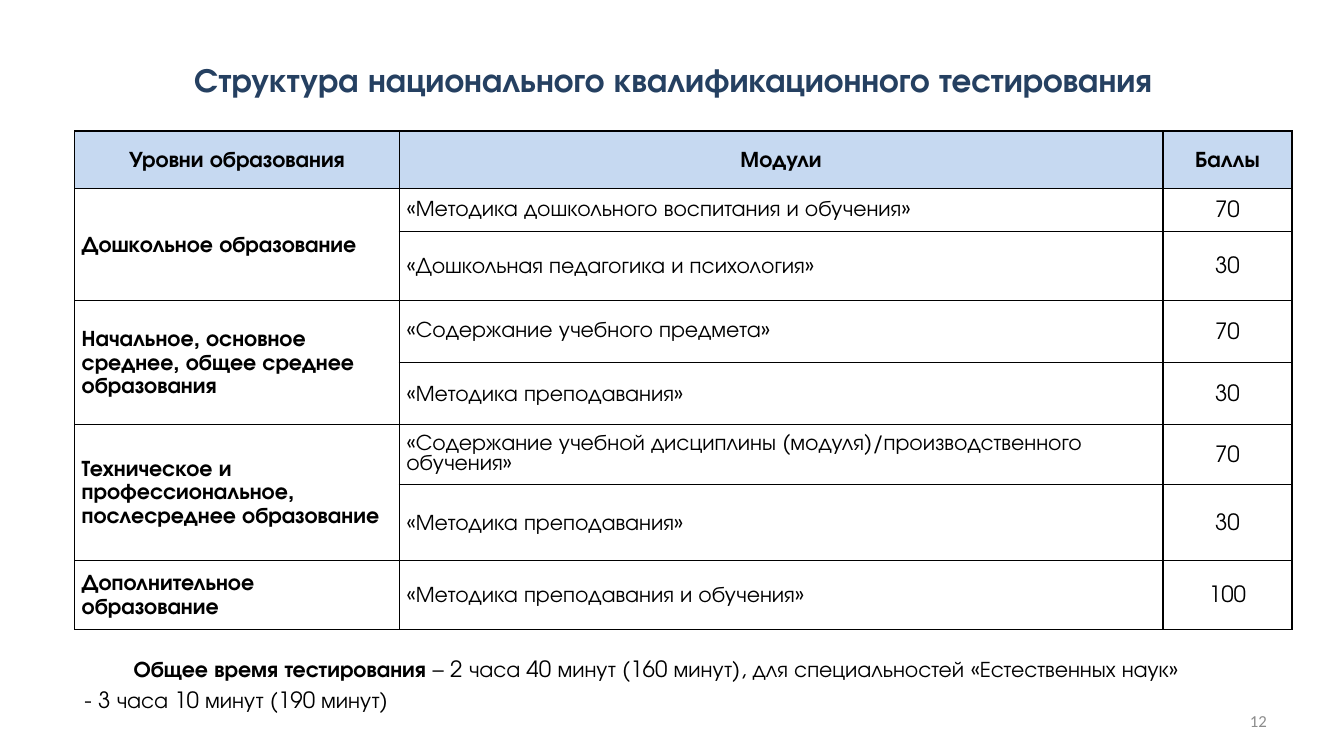
from lxml import etree
from pptx import Presentation
from pptx.dml.color import RGBColor
from pptx.enum.text import MSO_ANCHOR, PP_ALIGN
from pptx.oxml.ns import qn
from pptx.util import Cm, Pt

LEFT, CENTER, RIGHT = PP_ALIGN.LEFT, PP_ALIGN.CENTER, PP_ALIGN.RIGHT
JUSTIFY = PP_ALIGN.JUSTIFY
MIDDLE, TOP = MSO_ANCHOR.MIDDLE, MSO_ANCHOR.TOP

FONT = "TeX Gyre Adventor"
BLACK, NAVY, GRAY, HEADER_BLUE = "000000", "254061", "8C8C8C", "C6D9F1"
BODY = {"name": FONT, "size": Pt(16), "bold": False}
BOLD = {**BODY, "bold": True}
TITLE = {**BOLD, "size": Pt(24)}
PAGE_NUMBER = {"name": "Calibri", "size": Pt(12), "bold": False}


def color(hex_string):
    return RGBColor.from_string(hex_string)


def write(paragraph, runs, text_color=BLACK, **paragraph_format):
    """Fill a paragraph with (text, font format) runs."""
    for name, value in paragraph_format.items():
        setattr(paragraph, name, value)
    for text, font_format in runs:
        run = paragraph.add_run()
        run.text = text
        for name, value in font_format.items():
            setattr(run.font, name, value)
        run.font.color.rgb = color(text_color)


presentation = Presentation()
presentation.slide_width, presentation.slide_height = Cm(33.87), Cm(19.05)
slide = presentation.slides.add_slide(presentation.slide_layouts[6])

# Title, page number and note under the table
title_runs = [("Структура национального квалификационного тестирования", TITLE)]
note_runs = [
    ("Общее время тестирования ", BOLD),
    ("– 2 часа 40 минут (160 минут), для специальностей «Естественных наук» "
     "- 3 часа 10 минут (190 минут)", BODY),
]
text_boxes = [
    ((1.73, 1.14, 30.48, 1.73), MIDDLE, title_runs, NAVY, CENTER, 1.0, 0),
    ((24.28, 17.65, 7.9, 1.02), MIDDLE, [("12", PAGE_NUMBER)], GRAY, RIGHT, 1.0, 0),
    ((1.88, 16.28, 28.09, 1.83), TOP, note_runs, BLACK, JUSTIFY, 1.15, 1.24),
]
for box, anchor, runs, text_color, alignment, spacing, indent in text_boxes:
    text_frame = slide.shapes.add_textbox(*map(Cm, box)).text_frame
    text_frame.word_wrap = True
    text_frame.vertical_anchor = anchor
    paragraph = text_frame.paragraphs[0]
    write(paragraph, runs, text_color, alignment=alignment, line_spacing=spacing)
    if indent:
        paragraph._p.get_or_add_pPr().set("indent", str(Cm(indent)))

# Table: each level of education with its modules and points
headers = ["Уровни образования", "Модули", "Баллы"]
levels = [
    ("Дошкольное образование", [
        ("«Методика дошкольного воспитания и обучения»", 70),
        ("«Дошкольная педагогика и психология»", 30)]),
    ("Начальное, основное среднее, общее среднее образования", [
        ("«Содержание учебного предмета»", 70),
        ("«Методика преподавания»", 30)]),
    ("Техническое и профессиональное, послесреднее образование", [
        ("«Содержание учебной дисциплины (модуля)/производственного обучения»", 70),
        ("«Методика преподавания»", 30)]),
    ("Дополнительное образование", [
        ("«Методика преподавания и обучения»", 100)]),
]
column_widths = [8.18, 19.25, 3.25]
row_heights = [1.45, 1.09, 1.73, 1.57, 1.55, 1.52, 1.91, 1.75]

table = slide.shapes.add_table(
    len(row_heights), len(column_widths), Cm(1.88), Cm(3.3),
    Cm(sum(column_widths)), Cm(sum(row_heights))).table
table.first_row = table.horz_banding = False
for column, width in zip(table.columns, column_widths):
    column.width = Cm(width)
for row, height in zip(table.rows, row_heights):
    row.height = Cm(height)

cell_format = {"vertical_anchor": MIDDLE, "margin_left": Cm(0.18),
               "margin_right": Cm(0.18), "margin_top": 0, "margin_bottom": 0}
for row_index, row in enumerate(table.rows):
    for cell in row.cells:
        for name, value in cell_format.items():
            setattr(cell, name, value)
        properties = cell._tc.get_or_add_tcPr()
        for side in ("a:lnL", "a:lnR", "a:lnT", "a:lnB"):
            line = etree.SubElement(properties, qn(side), w=str(Pt(1)))
            fill = etree.SubElement(line, qn("a:solidFill"))
            etree.SubElement(fill, qn("a:srgbClr"), val=BLACK)
        if row_index == 0:
            cell.fill.solid()
            cell.fill.fore_color.rgb = color(HEADER_BLUE)
        else:
            cell.fill.background()

# Contents: (row, column, text, font format, alignment, line spacing)
contents = [(0, column, text, BOLD, CENTER, 1.15)
            for column, text in enumerate(headers)]
row_index = 1
for level, modules in levels:
    contents.append((row_index, 0, level, BOLD, LEFT, 1.15))
    if len(modules) > 1:
        last_cell = table.cell(row_index + len(modules) - 1, 0)
        table.cell(row_index, 0).merge(last_cell)
    for module_number, (module, points) in enumerate(modules, start=1):
        spacing = 1.15 if module_number == len(modules) else 1.0
        contents.append((row_index, 1, module, BODY, LEFT, spacing))
        contents.append((row_index, 2, str(points), BODY, CENTER, 1.15))
        row_index += 1

for row_index, column_index, text, font_format, alignment, spacing in contents:
    paragraph = table.cell(row_index, column_index).text_frame.paragraphs[0]
    write(paragraph, [(text, font_format)], alignment=alignment, line_spacing=spacing)

presentation.save("out.pptx")
